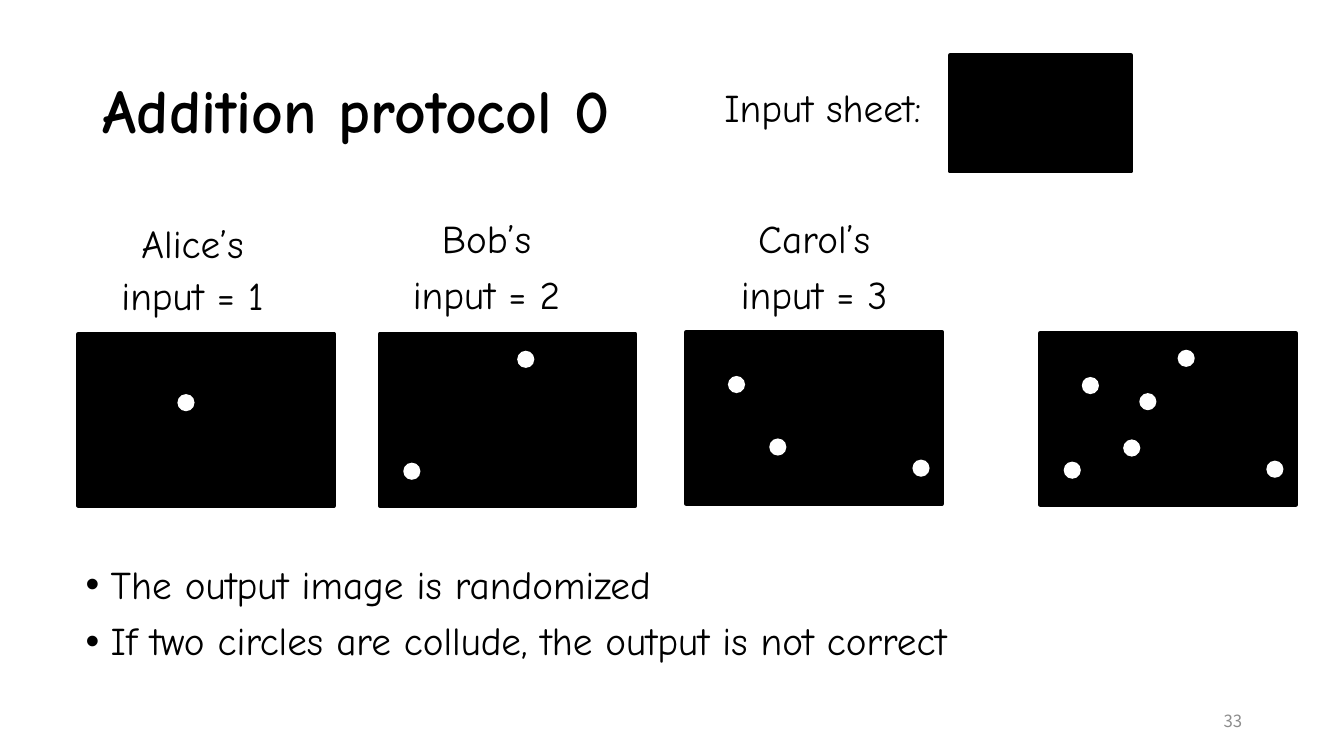
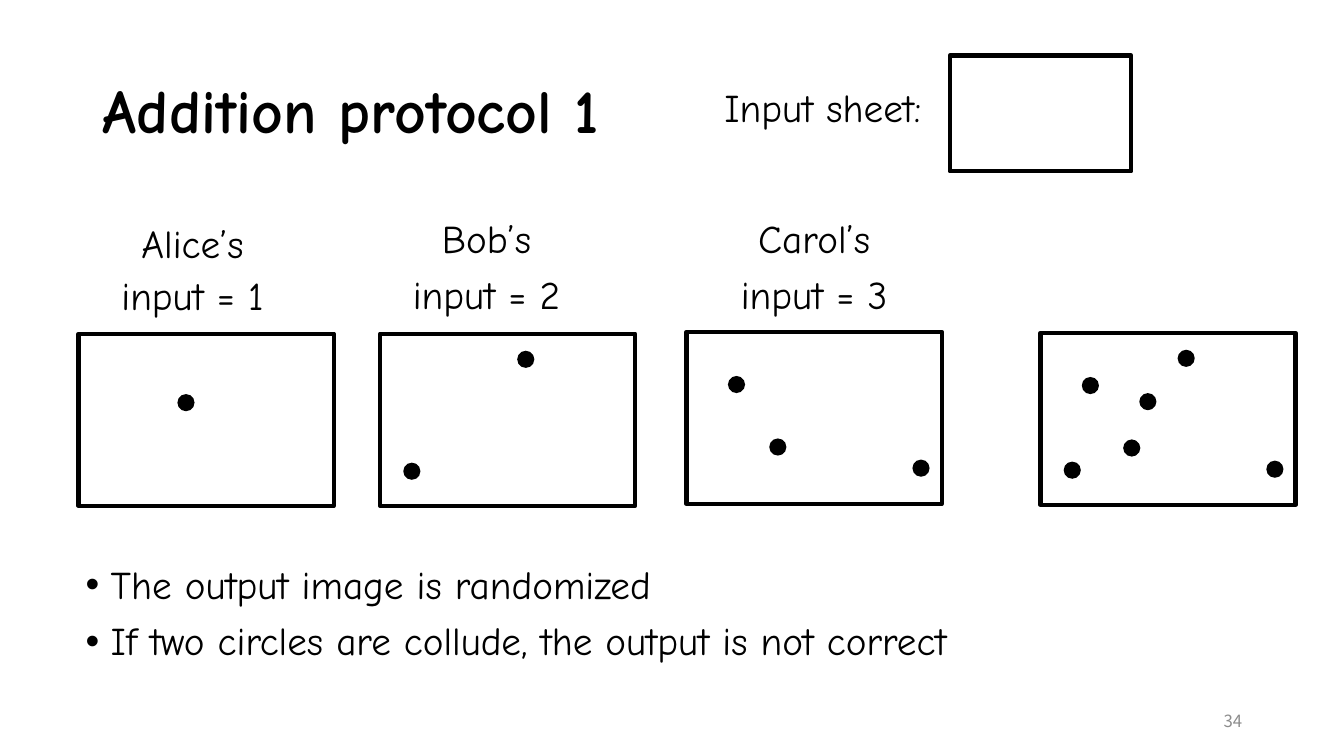
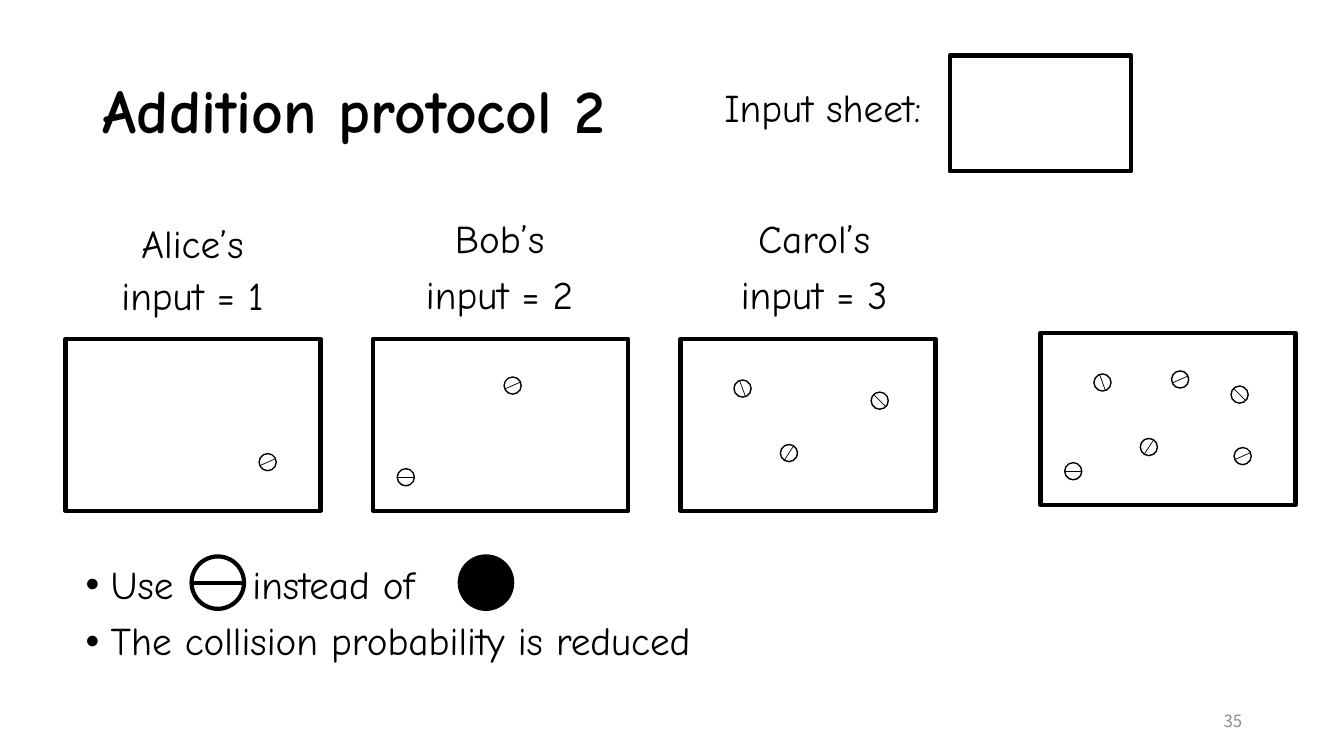
from math import cos, radians, sin

from lxml import etree
from pptx import Presentation
from pptx.dml.color import RGBColor
from pptx.enum.shapes import MSO_CONNECTOR, MSO_SHAPE
from pptx.enum.text import MSO_ANCHOR, MSO_AUTO_SIZE, PP_ALIGN
from pptx.oxml.ns import qn
from pptx.util import Inches, Pt

LEFT, CENTER, RIGHT = PP_ALIGN.LEFT, PP_ALIGN.CENTER, PP_ALIGN.RIGHT
TOP, MIDDLE = MSO_ANCHOR.TOP, MSO_ANCHOR.MIDDLE
RECTANGLE, OVAL = MSO_SHAPE.RECTANGLE, MSO_SHAPE.OVAL
STRAIGHT = MSO_CONNECTOR.STRAIGHT
NO_AUTOFIT = MSO_AUTO_SIZE.NONE

BLACK, WHITE, GRAY = "000000", "FFFFFF", "8C8C8C"
HAND_FONT, NUMBER_FONT = "Comic Neue", "Noto Sans CJK JP"
SHEET_WIDTH, SHEET_HEIGHT = 2.53, 1.71
MARK_SIZE = 0.17
TITLE_ONLY = 5

# Marks are (x, y) or (x, y, angle), measured from the corner of a sheet.
DOTS = {
    "Alice": [(0.98, 0.6)],
    "Bob": [(1.36, 0.17), (0.23, 1.28)],
    "Carol": [(0.41, 0.44), (0.82, 1.06), (2.24, 1.27)],
}
SLOTTED = {
    "Alice": [(1.92, 1.14, 156)],
    "Bob": [(0.24, 1.29, 0), (1.3, 0.38, 156)],
    "Carol": [(1.89, 0.53, 45), (0.53, 0.41, 70), (0.99, 1.05, 123)],
}
DOT_CORNERS = {"Alice": (0.78, 3.31), "Bob": (3.77, 3.31), "Carol": (6.81, 3.29)}
SLOTTED_CORNERS = {"Alice": (0.65, 3.36), "Bob": (3.7, 3.36), "Carol": (6.75, 3.36)}
OUTPUT_CORNER = (10.32, 3.3)


def color(hex_string):
    return RGBColor.from_string(hex_string)


def add_bullet(paragraph):
    properties = paragraph._p.get_or_add_pPr()
    properties.set("marL", str(Inches(0.25)))
    properties.set("indent", str(Inches(-0.25)))
    etree.SubElement(properties, qn("a:buFont")).set("typeface", "Arial")
    etree.SubElement(properties, qn("a:buChar")).set("char", "•")


def write_text(shape, paragraphs, size=28, font=HAND_FONT, fill=BLACK, bold=False,
               align=LEFT, anchor=TOP, spacing=0.9, bullets=False):
    """Fill a shape with paragraphs, each a string or a tuple of runs."""
    frame = shape.text_frame
    frame.word_wrap = True
    frame.auto_size = NO_AUTOFIT
    frame.vertical_anchor = anchor
    for index, runs in enumerate(paragraphs):
        paragraph = frame.add_paragraph() if index else frame.paragraphs[0]
        if bullets:
            add_bullet(paragraph)
        paragraph.alignment = align
        paragraph.line_spacing = spacing
        paragraph.space_before = Pt(10 if index else 0)
        for text in (runs,) if isinstance(runs, str) else runs:
            run = paragraph.add_run()
            run.text = text
            run.font.size = Pt(size)
            run.font.name = font
            run.font.bold = bold
            run.font.color.rgb = color(fill)
    return frame


def add_text(slide, box, paragraphs, **text_format):
    shape = slide.shapes.add_textbox(*map(Inches, box))
    return write_text(shape, paragraphs, **text_format)


def add_figure(shapes, kind, box, fill, line_width=0):
    shape = shapes.add_shape(kind, *map(Inches, box))
    shape.shadow.inherit = False
    shape.fill.solid()
    shape.fill.fore_color.rgb = color(fill)
    if line_width:
        shape.line.color.rgb = color(BLACK)
        shape.line.width = Pt(line_width)
    else:
        shape.line.fill.background()


def add_slotted_circle(shapes, left, top, angle, size=MARK_SIZE, outline=1, slot=0.5):
    """Draw a circle with a line across its middle at the given angle."""
    group = shapes.add_group_shape()
    add_figure(group.shapes, OVAL, (left, top, size, size), WHITE, outline)
    radius = size / 2
    x, y = left + radius, top + radius
    dx, dy = radius * cos(radians(angle)), radius * sin(radians(angle))
    ends = (x - dx, y - dy, x + dx, y + dy)
    line = group.shapes.add_connector(STRAIGHT, *map(Inches, ends))
    line.line.color.rgb = color(BLACK)
    line.line.width = Pt(slot)
    etree.SubElement(line._element.spPr, qn("a:effectLst"))


def add_sheet(slide, corner, marks, paper, ink):
    left, top = corner
    shapes = slide.shapes.add_group_shape().shapes
    add_figure(shapes, RECTANGLE, (left, top, SHEET_WIDTH, SHEET_HEIGHT), paper, 3)
    for x, y, *angle in marks:
        if angle:
            add_slotted_circle(shapes, left + x, top + y, angle[0])
        else:
            add_figure(shapes, OVAL, (left + x, top + y, MARK_SIZE, MARK_SIZE), ink)


def add_protocol_slide(presentation, number, bullets, paper=WHITE, ink=BLACK,
                       inputs=DOTS, corners=DOT_CORNERS, bob_left=3.8):
    """Add a slide whose output sheet overlays all input sheets."""
    slide = presentation.slides.add_slide(presentation.slide_layouts[TITLE_ONLY])
    title = slide.shapes.title
    title.left, title.top = Inches(0.92), Inches(0.4)
    title.width, title.height = Inches(11.5), Inches(1.45)
    write_text(title, [f"Addition protocol {number}"], size=44, bold=True, anchor=MIDDLE)
    add_text(slide, (9.42, 6.95, 3, 0.4), [str(33 + number)], size=12,
             font=NUMBER_FONT, fill=GRAY, align=RIGHT, anchor=MIDDLE, spacing=1.0)

    add_text(slide, (6.9, 0.83, 2.52, 0.59), ["Input sheet:"], align=CENTER)
    add_figure(slide.shapes, RECTANGLE, (9.42, 0.55, 1.8, 1.15), paper, 3)

    labels = {
        "Alice": ((0.83, 2.22, 2.16, 1.03), 0.8),
        "Bob": ((bob_left, 2.13, 2.05, 1.1), 0.9),
        "Carol": ((7.05, 2.13, 2.05, 1.1), 0.9),
    }
    for name, (box, spacing) in labels.items():
        marks = inputs[name]
        add_text(slide, box, [f"{name}’s", f"input = {len(marks)}"],
                 align=CENTER, spacing=spacing)
        add_sheet(slide, corners[name], marks, paper, ink)
    add_sheet(slide, OUTPUT_CORNER, sum(inputs.values(), []), paper, ink)

    frame = add_text(slide, (0.75, 5.56, 11.97, 1.4), bullets, bullets=True)
    return slide, frame


def add_symbol_comparison(slide, frame):
    """Put the two symbols into the first bullet, widening its gap for one."""
    gap = frame.paragraphs[0].runs[1]
    gap.font._element.set("spc", "4700")
    add_slotted_circle(slide.shapes, 1.9, 5.52, 0, size=0.52, outline=3, slot=3)
    add_figure(slide.shapes, OVAL, (4.56, 5.52, 0.52, 0.52), BLACK, 3)


def main():
    presentation = Presentation()
    presentation.slide_width = Inches(13.33)
    presentation.slide_height = Inches(7.5)

    dot_bullets = ["The output image is randomized",
                   "If two circles are collude, the output is not correct"]
    add_protocol_slide(presentation, 0, dot_bullets, paper=BLACK, ink=WHITE)
    add_protocol_slide(presentation, 1, dot_bullets)

    slotted_bullets = [("Use", " ", "instead of"), "The collision probability is reduced"]
    slide, frame = add_protocol_slide(presentation, 2, slotted_bullets, inputs=SLOTTED,
                                      corners=SLOTTED_CORNERS, bob_left=3.93)
    add_symbol_comparison(slide, frame)
    presentation.save("out.pptx")


if __name__ == "__main__":
    main()
